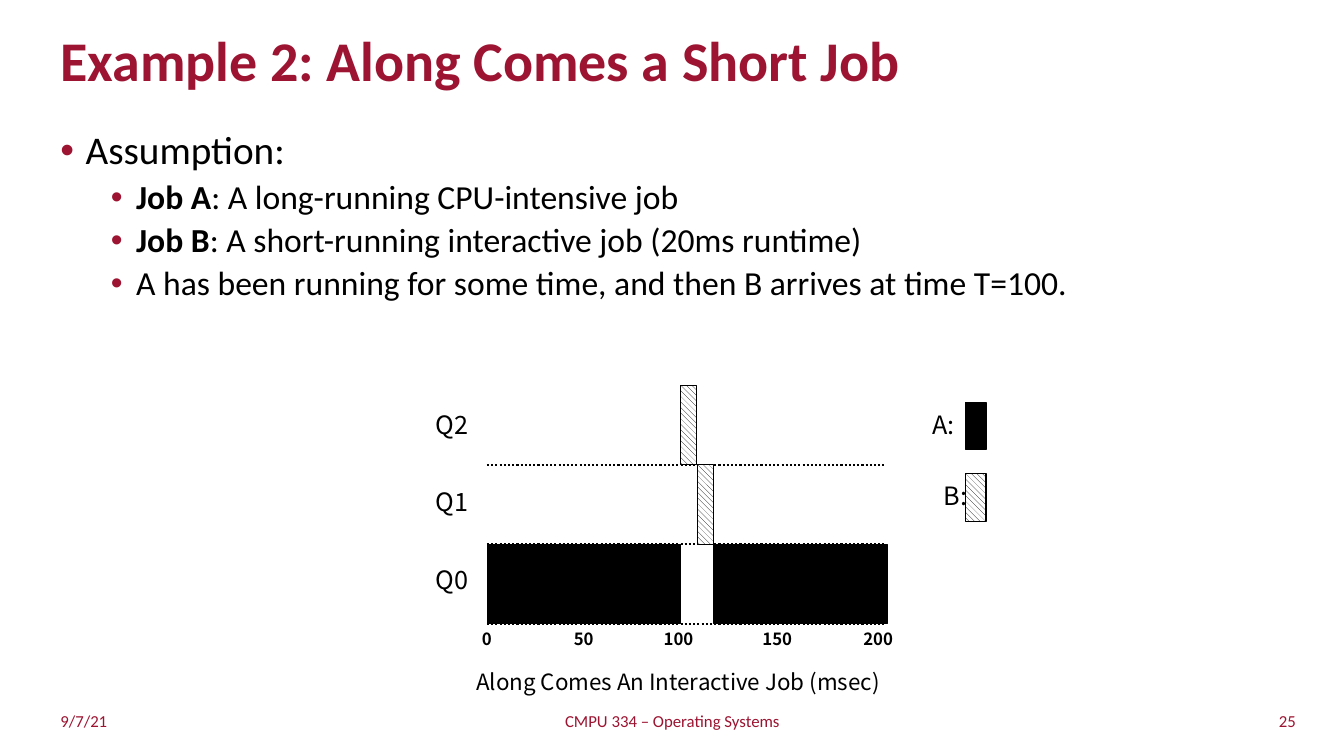
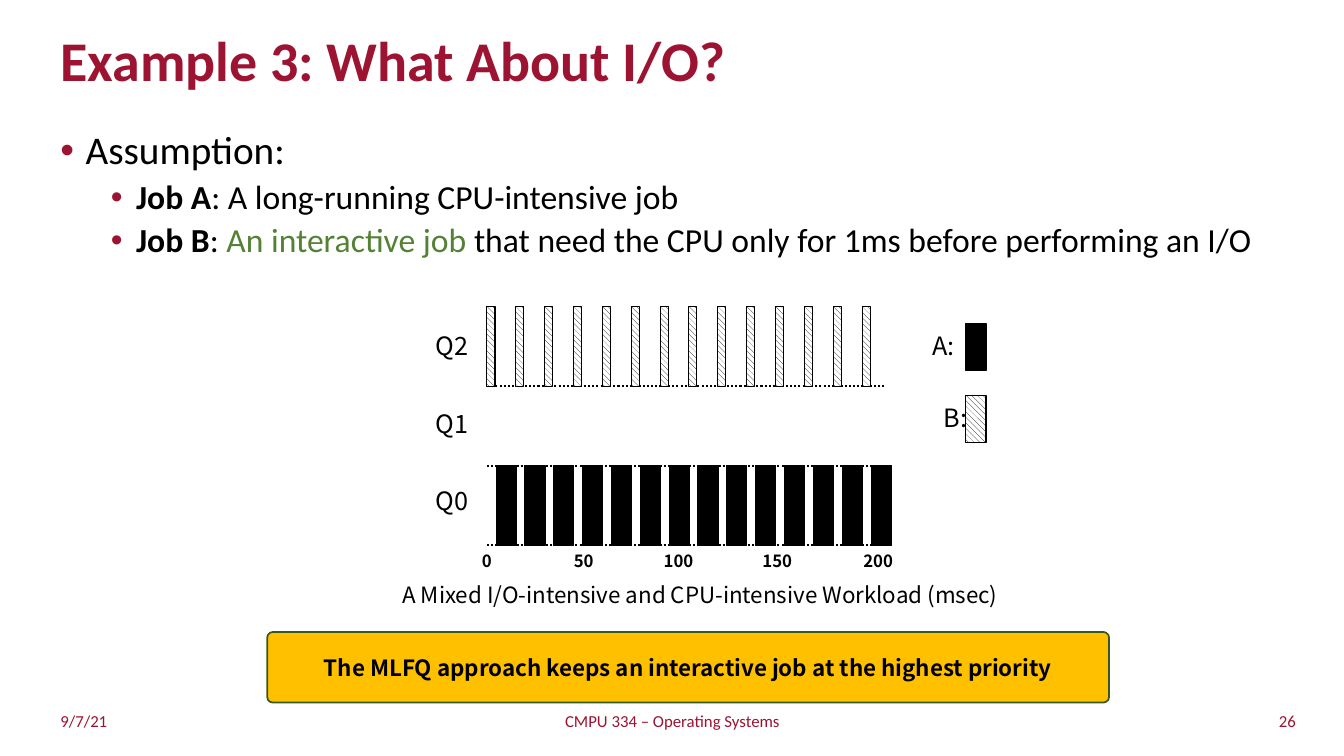
from dataclasses import dataclass

from lxml import etree
from pptx import Presentation
from pptx import util as u
from pptx.dml.color import RGBColor
from pptx.enum import dml, shapes, text
from pptx.oxml.ns import qn


@dataclass(frozen=True)
class Theme:
    crimson: RGBColor = RGBColor(0x9C, 0x14, 0x31)
    black: RGBColor = RGBColor(0, 0, 0)
    white: RGBColor = RGBColor(255, 255, 255)
    green: RGBColor = RGBColor(0x54, 0x82, 0x35)
    dark_green: RGBColor = RGBColor(0x38, 0x57, 0x23)
    amber: RGBColor = RGBColor(0xFF, 0xC0, 0x00)
    font: str = "Calibri"
    figure_font: str = "Noto Sans CJK KR"
    title: int = 40
    bullets: tuple = (28, 24)
    queue: int = 18
    caption: int = 16
    small: int = 12


THEME = Theme()
LEFT, CENTER, RIGHT = text.PP_ALIGN.LEFT, text.PP_ALIGN.CENTER, text.PP_ALIGN.RIGHT
MIDDLE = text.MSO_ANCHOR.MIDDLE
LANE_HEIGHT = 0.79
AXIS_WIDTH = 3.94
TICKS = (("0", 0), ("50", 0.96), ("100", 1.9), ("150", 2.88), ("200", 3.88))


def place(shape, left, top, width, height):
    shape.left, shape.top = u.Inches(left), u.Inches(top)
    shape.width, shape.height = u.Inches(width), u.Inches(height)


def style(font, size, color=THEME.black, bold=False, name=THEME.font):
    font.name, font.size, font.bold = name, u.Pt(size), bold
    font.color.rgb = color


def add_label(parent, box, words, size, align=CENTER, anchor=text.MSO_ANCHOR.TOP, **look):
    label = parent.add_textbox(*map(u.Inches, box))
    frame = label.text_frame
    frame.word_wrap = True
    frame.vertical_anchor = anchor
    frame.text = words
    para = frame.paragraphs[0]
    para.alignment = align
    style(para.runs[0].font, size, **look)


def add_title(page, words):
    title = page.shapes.title
    place(title, 0.5, 0.25, 11.45, 0.75)
    frame = title.text_frame
    frame.text = words
    frame.vertical_anchor = MIDDLE
    frame.auto_size = text.MSO_AUTO_SIZE.NONE
    para = frame.paragraphs[0]
    para.alignment, para.line_spacing = LEFT, 0.9
    style(para.runs[0].font, THEME.title, THEME.crimson, bold=True)


def add_bullet(para, indent):
    props = para._p.get_or_add_pPr()
    props.set("marL", str(u.Inches(indent)))
    props.set("indent", str(u.Inches(-0.25)))
    color = etree.SubElement(props, qn("a:buClr"))
    etree.SubElement(color, qn("a:srgbClr"), val=str(THEME.crimson))
    etree.SubElement(props, qn("a:buFont"), typeface="Arial")
    etree.SubElement(props, qn("a:buChar"), char="•")


def add_body(page, items):
    """Each item is a level and its spans of (words, bold, color)."""
    body = page.placeholders[1]
    place(body, 0.5, 1.25, 12.33, 5.45)
    frame = body.text_frame
    frame.auto_size = text.MSO_AUTO_SIZE.NONE
    for index, (level, spans) in enumerate(items):
        para = frame.add_paragraph() if index else frame.paragraphs[0]
        para.level = level
        add_bullet(para, 0.25 + 0.5 * level)
        para.alignment, para.line_spacing = LEFT, 0.9
        para.space_before = u.Pt(5 if index else 0)
        para.space_after = u.Pt(0)
        for words, bold, color in spans:
            span = para.add_run()
            span.text = words
            style(span.font, THEME.bullets[level], color, bold)


def add_footer(page, number):
    for left, width, words, align in (
        (0.5, 3.76, "9/7/21", LEFT),
        (4.42, 4.5, "CMPU 334 – Operating Systems", CENTER),
        (9.23, 3.72, str(number), RIGHT),
    ):
        add_label(page.shapes, (left, 6.95, width, 0.4), words, THEME.small,
                  align, MIDDLE, color=THEME.crimson)


def add_job_bar(parent, job, left, top, width, height):
    """Job A is solid black, job B is hatched."""
    bar = parent.add_shape(shapes.MSO_SHAPE.RECTANGLE,
                           *map(u.Inches, (left, top, width, height)))
    bar.shadow.inherit = False
    if job == "A":
        bar.fill.solid()
    else:
        bar.fill.patterned()
        bar.fill.pattern = dml.MSO_PATTERN.WIDE_DOWNWARD_DIAGONAL
        bar.fill.back_color.rgb = THEME.white
    bar.fill.fore_color.rgb = THEME.black
    bar.line.color.rgb = THEME.black
    bar.line.width = u.Pt(0.75)


def add_dotted_line(parent, left, right, top):
    line = parent.add_connector(shapes.MSO_CONNECTOR.STRAIGHT,
                                *map(u.Inches, (left, top, right, top)))
    line.line.color.rgb = THEME.black
    line.line.width = u.Pt(1.5)
    line.line.dash_style = dml.MSO_LINE.ROUND_DOT
    etree.SubElement(line._element.spPr, qn("a:effectLst"))


def add_legend(parent, left, top):
    for job, label_left, row in (("A", left, 0), ("B", left + 0.12, 0.71)):
        add_label(parent, (label_left, top + row + 0.02, 0.57, 0.4), job + ":",
                  THEME.queue, name=THEME.figure_font)
        add_job_bar(parent, job, left + 0.51, top + row, 0.2, 0.47)


def add_schedule(page, left, top, slots):
    """Draw three queue lanes; slots are (job, lane, start, width)."""
    parent = page.shapes.add_group_shape().shapes
    for lane, queue in enumerate(("Q2", "Q1", "Q0")):
        add_dotted_line(parent, left, left + AXIS_WIDTH, top + LANE_HEIGHT * (lane + 1))
        add_label(parent, (left - 0.69, top + 0.19 + 0.77 * lane, 0.69, 0.4), queue,
                  THEME.queue, name=THEME.figure_font)
    for job, lane, start, width in slots:
        add_job_bar(parent, job, left + start, top + LANE_HEIGHT * lane, width, LANE_HEIGHT)
    for words, center in TICKS:
        add_label(parent, (left + center - 0.35, top + 3 * LANE_HEIGHT, 0.7, 0.3), words,
                  THEME.small, bold=True, name=THEME.figure_font)
    add_legend(parent, left + 4.24, top + 0.17)


def add_takeaway(page, box, words):
    banner = page.shapes.add_shape(shapes.MSO_SHAPE.ROUNDED_RECTANGLE, *map(u.Inches, box))
    banner.adjustments[0] = 0.08
    banner.shadow.inherit = False
    banner.fill.solid()
    banner.fill.fore_color.rgb = THEME.amber
    banner.line.color.rgb = THEME.dark_green
    banner.line.width = u.Pt(1.25)
    frame = banner.text_frame
    frame.word_wrap = True
    frame.vertical_anchor = MIDDLE
    frame.text = words
    para = frame.paragraphs[0]
    para.alignment = CENTER
    style(para.runs[0].font, THEME.caption, bold=True, name=THEME.figure_font)


def add_example(deck, number, title, items, schedule_top, slots, caption, caption_box):
    page = deck.slides.add_slide(deck.slide_layouts[1])
    add_title(page, title)
    add_body(page, items)
    add_schedule(page, 4.83, schedule_top, slots)
    add_label(page.shapes, caption_box, caption, THEME.caption, name=THEME.figure_font)
    add_footer(page, number)
    return page


def plain(words):
    return words, False, THEME.black


def strong(words):
    return words, True, THEME.black


def interleaved_slots():
    """B runs briefly in the top lane, then A fills the bottom lane until B returns."""
    period = 3.72 / 13
    for turn in range(14):
        yield "B", 0, turn * period, 0.08
        yield "A", 2, turn * period + 0.09, 0.2


def main():
    deck = Presentation()
    deck.slide_width, deck.slide_height = u.Inches(13.33), u.Inches(7.5)
    shared_items = [
        (0, [plain("Assumption:")]),
        (1, [strong("Job A"), plain(": A long-running CPU-intensive job")]),
    ]
    add_example(
        deck, 25, "Example 2: Along Comes a Short Job",
        shared_items + [
            (1, [strong("Job B"), plain(": A short-running interactive job (20ms runtime)")]),
            (1, [plain("A has been running for some time, and then B arrives at time T=100.")]),
        ],
        3.82,
        [("A", 2, 0.01, 1.91), ("B", 0, 1.92, 0.16), ("B", 1, 2.09, 0.16), ("A", 2, 2.25, 1.72)],
        "Along Comes An Interactive Job (msec)", (4.42, 6.58, 4.61, 0.37),
    )
    page = add_example(
        deck, 26, "Example 3: What About I/O?",
        shared_items + [
            (1, [strong("Job B"), plain(": "), ("An interactive job ", False, THEME.green),
                 plain("that need the CPU only for 1ms before performing an I/O")]),
        ],
        3.04, interleaved_slots(),
        "A Mixed I/O-intensive and CPU-intensive Workload (msec)", (3.36, 5.72, 7.17, 0.37),
    )
    add_takeaway(page, (2.65, 6.27, 8.35, 0.7),
                 "The MLFQ approach keeps an interactive job at the highest priority")
    deck.save("out.pptx")


if __name__ == "__main__":
    main()
